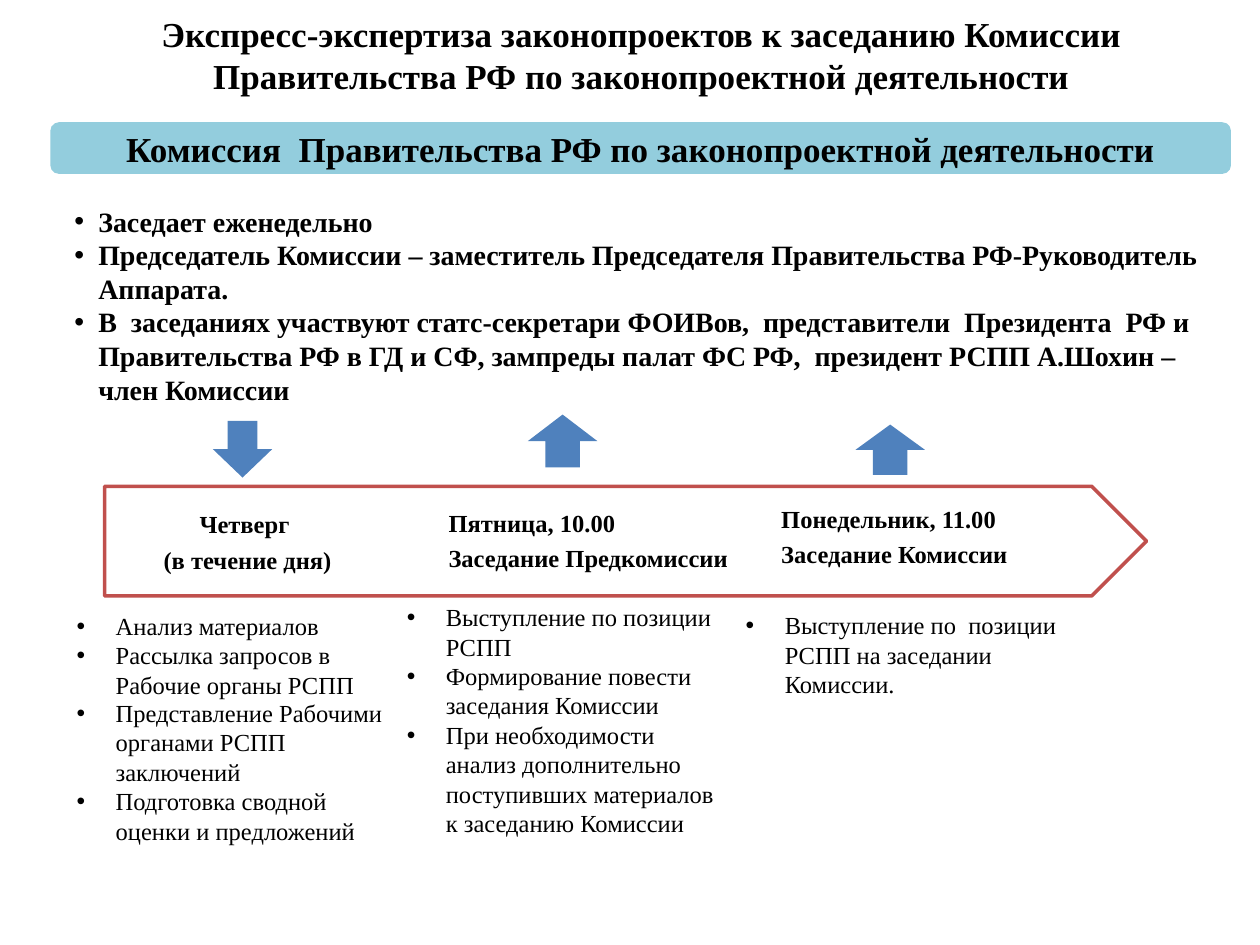
from lxml.etree import SubElement
from pptx import Presentation
from pptx.dml.color import RGBColor
from pptx.enum.shapes import MSO_SHAPE as Preset
from pptx.enum.text import MSO_ANCHOR as Anchor, MSO_AUTO_SIZE as AutoSize, PP_ALIGN as Align
from pptx.oxml.ns import qn
from pptx.util import Inches, Pt

COLORS = {"text": "000000", "banner": "93CDDD", "arrow": "4F81BD",
          "plate": "FFFFFF", "border": "C0504D"}
FONT = "Times New Roman"
SLIDE_W, SLIDE_H = Inches(10), Inches(7.5)
COLS, ROWS = 100, 75
LIST_COLS = 26.8

TITLE = ("Экспресс-экспертиза законопроектов к заседанию Комиссии "
         "Правительства РФ по законопроектной деятельности")
BANNER = "Комиссия  Правительства РФ по законопроектной деятельности"
FACTS = [
    "Заседает еженедельно",
    "Председатель Комиссии – заместитель Председателя Правительства РФ-Руководитель Аппарата.",
    "В  заседаниях участвуют статс-секретари ФОИВов,  представители  Президента  РФ и "
    "Правительства РФ в ГД и СФ, зампреды палат ФС РФ,  президент РСПП А.Шохин – член Комиссии",
]
# Grid box, alignment, lines
DAYS = [
    ((9.4, 39, 20.5, 8.3), Align.CENTER, ["Четверг ", "(в течение дня)"]),
    ((35.6, 38.6, 22.9, 8.9), Align.LEFT, ["Пятница, 10.00", "Заседание Предкомиссии"]),
    ((62, 36, 25.5, 13.4), Align.LEFT, ["Понедельник, 11.00", "Заседание Комиссии"]),
]
# Column, row, height in rows, anchor, items
TASKS = [
    (5.1, 48, 8.1, Anchor.TOP,
     ["Анализ материалов", "Рассылка запросов в Рабочие органы РСПП"]),
    (5.1, 54.9, 14.9, Anchor.TOP,
     ["Представление Рабочими органами РСПП заключений",
      "Подготовка сводной оценки и предложений"]),
    (31.3, 47.3, 14.9, Anchor.TOP,
     ["Выступление по позиции РСПП", "Формирование повести заседания Комиссии",
      "При необходимости анализ дополнительно поступивших материалов к заседанию Комиссии"]),
    (58.2, 46.5, 10.9, Anchor.MIDDLE,
     ["Выступление по  позиции РСПП на заседании Комиссии."]),
]
ARROWS = [
    (Preset.DOWN_ARROW, (16.9, 33.4, 4.7, 4.5)),
    (Preset.UP_ARROW, (41.9, 32.9, 5.5, 4.2)),
    (Preset.UP_ARROW, (67.9, 33.7, 5.5, 4)),
]


def grid(col, row, cols, rows):
    """Turn grid columns and rows into left, top, width, height."""
    return (int(SLIDE_W * col / COLS), int(SLIDE_H * row / ROWS),
            int(SLIDE_W * cols / COLS), int(SLIDE_H * rows / ROWS))


def move(placeholder, box):
    placeholder.left, placeholder.top, placeholder.width, placeholder.height = grid(*box)


def set_bullet(paragraph, indent):
    props = paragraph._p.get_or_add_pPr()
    props.set("marL", str(Inches(indent)))
    props.set("indent", str(-Inches(indent)))
    SubElement(props, qn("a:buFont"), typeface="Arial")
    SubElement(props, qn("a:buChar"), char="•")


def write(holder, lines, size=14, bold=False, align=Align.LEFT, anchor=Anchor.TOP,
          indent=None, spacing=1.0, after=0, inset=None):
    frame = holder.text_frame
    frame.word_wrap = True
    frame.auto_size = AutoSize.NONE
    frame.vertical_anchor = anchor
    if inset is not None:
        frame.margin_left = frame.margin_right = 0
        frame.margin_top = frame.margin_bottom = Inches(inset)
    for number, line in enumerate(lines):
        paragraph = frame.add_paragraph() if number else frame.paragraphs[0]
        paragraph.alignment = align
        paragraph.line_spacing = spacing
        paragraph.space_before, paragraph.space_after = Pt(0), Pt(after)
        if indent:
            set_bullet(paragraph, indent)
        run = paragraph.add_run()
        run.text = line
        run.font.name, run.font.size, run.font.bold = FONT, Pt(size), bold
        run.font.color.rgb = RGBColor.from_string(COLORS["text"])


def add_preset(slide, preset, box, fill, border=None):
    shape = slide.shapes.add_shape(preset, *grid(*box))
    shape.shadow.inherit = False
    shape.fill.solid()
    shape.fill.fore_color.rgb = RGBColor.from_string(COLORS[fill])
    if border:
        shape.line.color.rgb = RGBColor.from_string(COLORS[border])
        shape.line.width = Pt(2)
    else:
        shape.line.fill.background()
    return shape


def add_text(slide, box, lines, **text_format):
    write(slide.shapes.add_textbox(*grid(*box)), lines, **text_format)


def add_headings(slide):
    title, facts = slide.shapes.title, slide.placeholders[1]
    move(title, (5.9, 0, 90, 8.7))
    write(title, [TITLE], size=20, bold=True, align=Align.CENTER, anchor=Anchor.MIDDLE)
    banner = add_preset(slide, Preset.ROUNDED_RECTANGLE, (4, 9.7, 93.7, 4.1), "banner")
    write(banner, [BANNER], size=20, bold=True, align=Align.CENTER, anchor=Anchor.MIDDLE)
    move(facts, (4.9, 15.7, 93.5, 17.2))
    write(facts, FACTS, size=16, bold=True, indent=0.19)


def add_schedule(slide):
    add_preset(slide, Preset.PENTAGON, (8.3, 38.6, 82.7, 8.7), "plate", "border")
    for box, align, lines in DAYS:
        add_text(slide, box, lines, bold=True, align=align, anchor=Anchor.MIDDLE,
                 spacing=0.9, after=5, inset=0.16)
    for preset, box in ARROWS:
        add_preset(slide, preset, box, "arrow")
    for col, row, rows, anchor, items in TASKS:
        add_text(slide, (col, row, LIST_COLS, rows), items, anchor=anchor, indent=0.31)


def main():
    deck = Presentation()
    deck.slide_width, deck.slide_height = SLIDE_W, SLIDE_H
    slide = deck.slides.add_slide(deck.slide_layouts[1])
    add_headings(slide)
    add_schedule(slide)
    deck.save("out.pptx")


if __name__ == "__main__":
    main()
